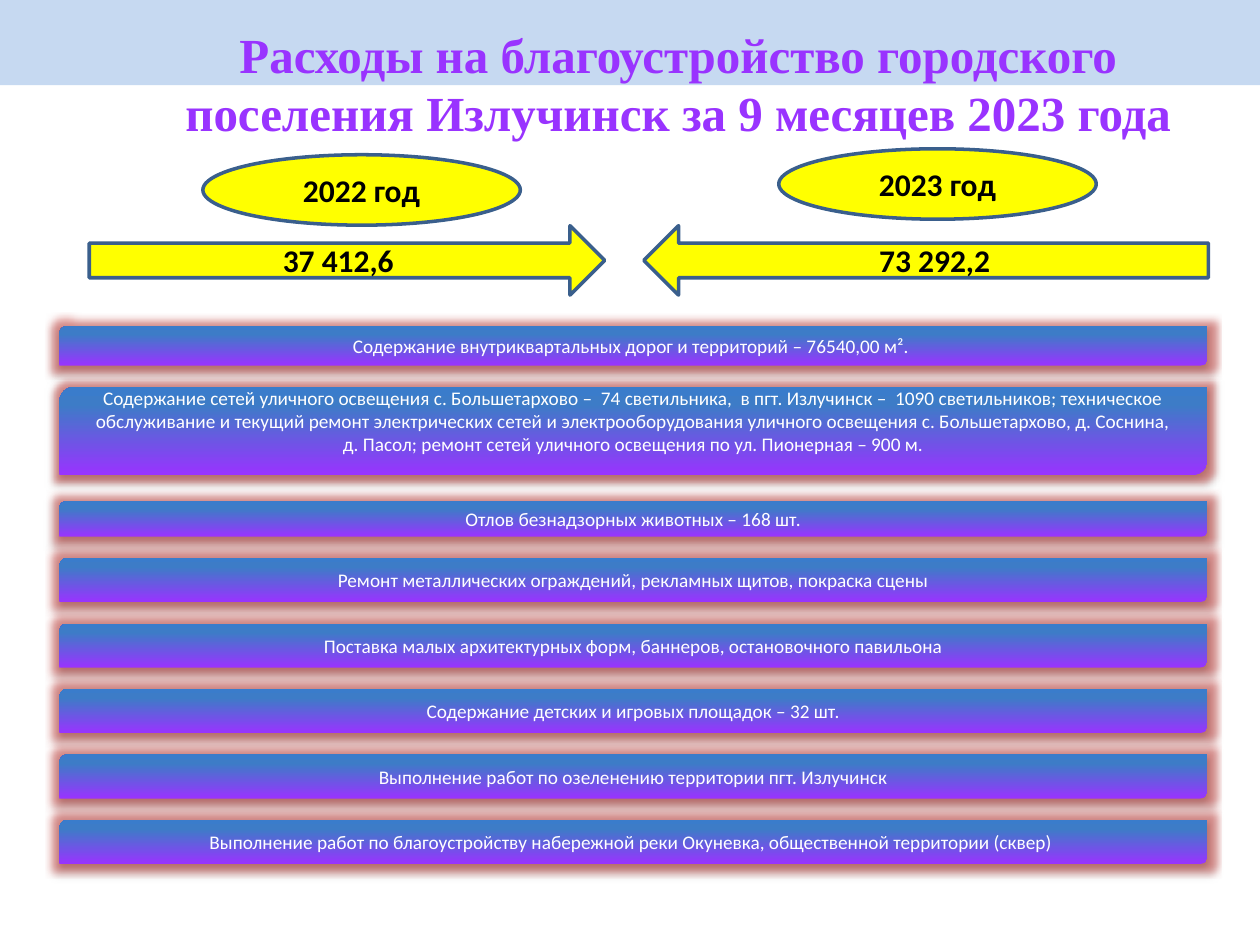
from dataclasses import dataclass

from lxml.etree import SubElement
from pptx import Presentation
from pptx.dml.color import RGBColor
from pptx.enum.shapes import MSO_SHAPE
from pptx.enum.text import MSO_ANCHOR, PP_ALIGN
from pptx.oxml import parse_xml
from pptx.oxml.ns import qn
from pptx.util import Cm, Pt


@dataclass(frozen=True)
class Theme:
    band: str = "C6D9F1"
    purple: str = "9933FF"
    yellow: str = "FFFF00"
    outline: str = "3A5F8C"
    glow: str = "C83A36"
    black: str = "000000"
    white: str = "FFFFFF"
    gradient: tuple = ((0, "9933FF"), (80, "3D7CC7"), (100, "3A7CCB"))
    title_font: str = "Times New Roman"
    body_font: str = "Calibri"
    title_size: float = 28
    year_size: float = 18
    row_size: float = 11


THEME = Theme()

TITLE = "Расходы на благоустройство городского поселения Излучинск за 9 месяцев 2023 года"

# label, ellipse left and top, amount, arrow left and width, points left (cm)
YEARS = [
    ("2022 год", 4.09, 3.12, "37 412,6", 1.8, 10.39, False),
    ("2023 год", 15.7, 3.0, "73 292,2", 12.98, 11.38, True),
]
ELLIPSE_WIDTH, ELLIPSE_HEIGHT = 6.4, 1.42
ARROW_TOP, ARROW_HEIGHT = 4.55, 1.4

# height, gap below (cm), text
WORKS = [
    (0.79, 0.43, "Содержание внутриквартальных дорог и территорий – 76540,00 м². "),
    (1.78, 0.53, "Содержание сетей уличного освещения с. Большетархово –  74 светильника,  "
                 "в пгт. Излучинск –  1090 светильников; техническое обслуживание и текущий "
                 "ремонт электрических сетей и электрооборудования уличного освещения "
                 "с. Большетархово, д. Соснина,\vд. Пасол; ремонт сетей уличного освещения "
                 "по ул. Пионерная – 900 м."),
    (0.71, 0.43, "Отлов безнадзорных животных – 168 шт."),
    (0.89, 0.43, "Ремонт металлических ограждений, рекламных щитов, покраска сцены"),
    (0.89, 0.43, "Поставка малых архитектурных форм, баннеров, остановочного павильона"),
    (0.89, 0.43, "Содержание детских и игровых площадок – 32 шт."),
    (0.89, 0.43, "Выполнение работ по озеленению территории пгт. Излучинск"),
    (0.89, 0.43, "Выполнение работ по благоустройству набережной реки Окуневка, "
                 "общественной территории (сквер) "),
]
ROWS_LEFT, ROWS_TOP, ROWS_WIDTH = 1.2, 6.58, 23.14
TALL_ROW = 1.5

GRADIENT_XML = (
    '<a:gradFill xmlns:a="http://schemas.openxmlformats.org/drawingml/2006/main" '
    'rotWithShape="1"><a:gsLst>{stops}</a:gsLst><a:lin ang="16200000" scaled="0"/></a:gradFill>'
)
STOP_XML = '<a:gs pos="{}"><a:srgbClr val="{}"/></a:gs>'


def write(box, text, size, color, font=THEME.body_font, bold=False, anchor=MSO_ANCHOR.MIDDLE):
    frame = box.text_frame
    frame.word_wrap = True
    frame.vertical_anchor = anchor
    frame.text = text
    paragraph = frame.paragraphs[0]
    paragraph.alignment = PP_ALIGN.CENTER
    for span in paragraph.runs:
        span.font.name = font
        span.font.size = Pt(size)
        span.font.bold = bold
        span.font.color.rgb = RGBColor.from_string(color)


def add_box(page, kind, left, top, width, height, fill=None, line=None):
    box = page.shapes.add_shape(kind, Cm(left), Cm(top), Cm(width), Cm(height))
    box.shadow.inherit = False
    if fill:
        box.fill.solid()
        box.fill.fore_color.rgb = RGBColor.from_string(fill)
    if line:
        box.line.color.rgb = RGBColor.from_string(line)
        box.line.width = Pt(2)
    else:
        box.line.fill.background()
    return box


def add_color(parent, color, opacity):
    node = SubElement(parent, qn("a:srgbClr"), val=color)
    SubElement(node, qn("a:alpha"), val=str(opacity * 1000))


def apply_row_style(box):
    """Give the box an upward gradient, a red glow and a soft shadow below."""
    properties = box._element.spPr
    stops = "".join(STOP_XML.format(pos * 1000, color) for pos, color in THEME.gradient)
    properties.find(qn("a:prstGeom")).addnext(parse_xml(GRADIENT_XML.format(stops=stops)))
    effects = properties.find(qn("a:effectLst"))
    glow = SubElement(effects, qn("a:glow"), rad=str(Pt(8)))
    add_color(glow, THEME.glow, 50)
    shadow = SubElement(effects, qn("a:outerShdw"), blurRad=str(Pt(3.1)), dist=str(Pt(1.8)),
                        dir="5400000", rotWithShape="0")
    add_color(shadow, THEME.black, 35)


def add_year(page, label, left, top, amount, arrow_left, arrow_width, points_left):
    arrow = add_box(page, MSO_SHAPE.RIGHT_ARROW, arrow_left, ARROW_TOP, arrow_width,
                    ARROW_HEIGHT, THEME.yellow, THEME.outline)
    if points_left:
        arrow._element.spPr.find(qn("a:xfrm")).set("flipH", "1")
    ellipse = add_box(page, MSO_SHAPE.OVAL, left, top, ELLIPSE_WIDTH, ELLIPSE_HEIGHT,
                      THEME.yellow, THEME.outline)
    for box, text in ((arrow, amount), (ellipse, label)):
        write(box, text, THEME.year_size, THEME.black, bold=True)


def add_works(page):
    top = ROWS_TOP
    for height, gap, text in WORKS:
        row = add_box(page, MSO_SHAPE.ROUND_2_DIAG_RECTANGLE, ROWS_LEFT, top, ROWS_WIDTH, height)
        apply_row_style(row)
        write(row, text, THEME.row_size, THEME.white)
        if height > TALL_ROW:
            row.text_frame.margin_top = 0
            row.text_frame.margin_bottom = Cm(0.4)
        top += height + gap


def main():
    deck = Presentation()
    deck.slide_width, deck.slide_height = Cm(25.4), Cm(19.05)
    page = deck.slides.add_slide(deck.slide_layouts[6])
    add_box(page, MSO_SHAPE.RECTANGLE, 0, 0, 25.4, 1.72, THEME.band)
    title = page.shapes.add_textbox(Cm(2.24), Cm(0.36), Cm(22.86), Cm(3.18))
    write(title, TITLE, THEME.title_size, THEME.purple, THEME.title_font, True, MSO_ANCHOR.TOP)
    for year in YEARS:
        add_year(page, *year)
    add_works(page)
    deck.save("out.pptx")


if __name__ == "__main__":
    main()
